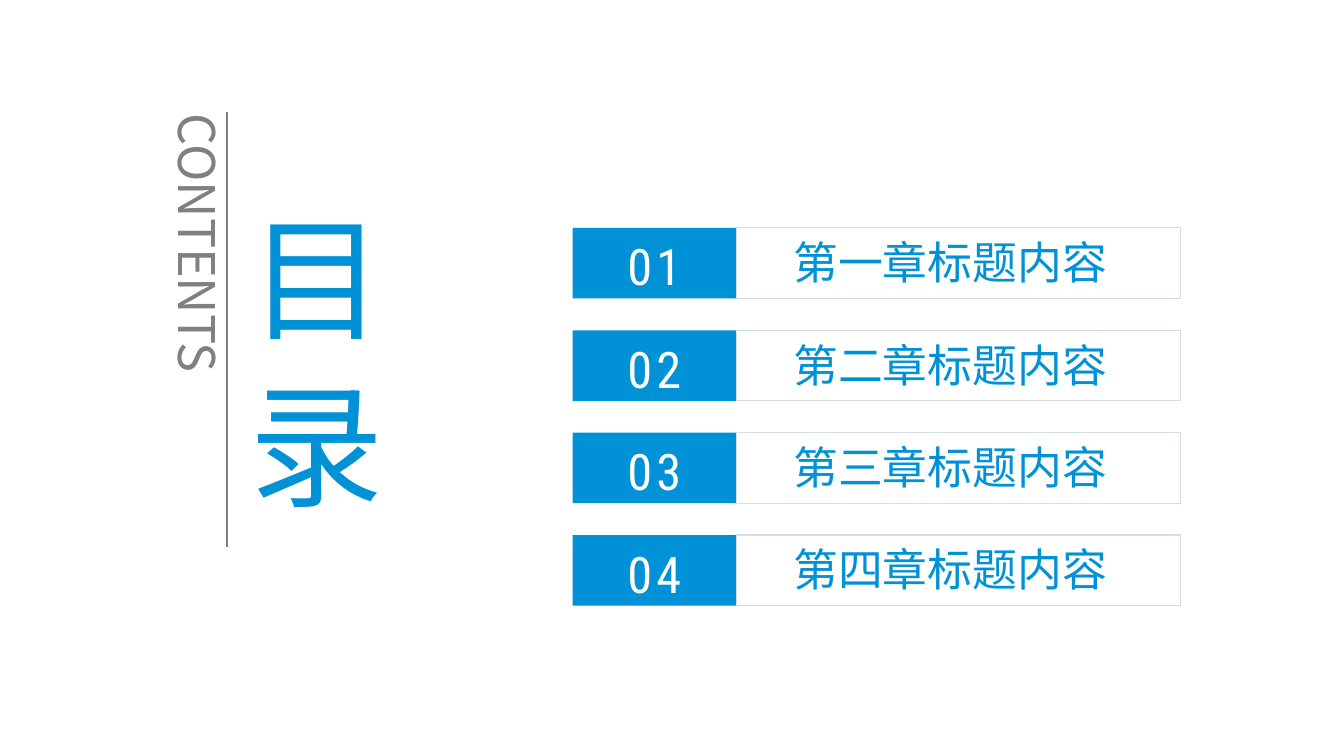
from dataclasses import dataclass

from pptx import Presentation
from pptx.dml.color import RGBColor
from pptx.enum.shapes import MSO_CONNECTOR, MSO_SHAPE
from pptx.enum.text import MSO_ANCHOR, MSO_AUTO_SIZE, PP_ALIGN
from pptx.oxml.ns import qn
from pptx.util import Inches, Pt


@dataclass(frozen=True)
class Theme:
    blue: RGBColor = RGBColor(0x00, 0x91, 0xD6)
    gray: RGBColor = RGBColor(0x80, 0x80, 0x80)
    border: RGBColor = RGBColor(0xD6, 0xDC, 0xE5)
    white: RGBColor = RGBColor(0xFF, 0xFF, 0xFF)
    cjk_font: str = "Noto Sans CJK SC"
    number_font: str = "Roboto Condensed"
    title_size: int = 96
    label_size: int = 36
    number_size: int = 36
    chapter_size: int = 32


THEME = Theme()
CHAPTERS = ["第一章标题内容", "第二章标题内容", "第三章标题内容", "第四章标题内容"]


def set_text(tf, text, font, size, color):
    """Fill a text frame with one run and return that run."""
    tf.text = text
    r = tf.paragraphs[0].runs[0]
    r.font.name = font
    r.font.size = Pt(size)
    r.font.color.rgb = color
    ea = r.font._element.makeelement(qn("a:ea"), {"typeface": font})
    r.font._element.find(qn("a:latin")).addnext(ea)
    return r


def add_text(slide, box, text, size, color, vertical=False):
    sp = slide.shapes.add_textbox(*map(Inches, box))
    tf = sp.text_frame
    tf.word_wrap = False
    tf.auto_size = MSO_AUTO_SIZE.SHAPE_TO_FIT_TEXT
    if vertical:
        tf._txBody.bodyPr.set("vert", "eaVert")
    set_text(tf, text, THEME.cjk_font, size, color)


def add_rect(slide, box, fill=None, line=None):
    sp = slide.shapes.add_shape(MSO_SHAPE.RECTANGLE, *map(Inches, box))
    sp.shadow.inherit = False
    if fill is None:
        sp.fill.background()
    else:
        sp.fill.solid()
        sp.fill.fore_color.rgb = fill
    if line is None:
        sp.line.fill.background()
    else:
        sp.line.color.rgb = line
        sp.line.width = Pt(1)
    return sp


def add_heading(slide, left, top):
    """Vertical title and label on either side of a rule."""
    add_text(slide, (left + 0.61, top + 0.97, 1.82, 3.1), "目 录",
             THEME.title_size, THEME.blue, vertical=True)
    add_text(slide, (left, top, 0.81, 2.69), "CONTENTS",
             THEME.label_size, THEME.gray, vertical=True)

    # Dividing rule
    x = Inches(left + 0.74)
    rule = slide.shapes.add_connector(
        MSO_CONNECTOR.STRAIGHT, x, Inches(top + 0.08), x, Inches(top + 4.4))
    rule.line.color.rgb = THEME.gray
    rule.line.width = Pt(1.5)
    sp_pr = rule._element.spPr
    sp_pr.append(sp_pr.makeelement(qn("a:effectLst"), {}))


def add_chapter(slide, left, top, width, height, number, title):
    """Numbered blue tab followed by a bordered chapter title."""
    tab_w = 1.62
    add_text(slide, (left + 2.09, top + 0.02, 3.34, 0.64), title,
             THEME.chapter_size, THEME.blue)
    add_rect(slide, (left + tab_w, top, width - tab_w, height), line=THEME.border)

    # Number tab
    tab = add_rect(slide, (left, top, tab_w, height), fill=THEME.blue)
    tf = tab.text_frame
    tf.vertical_anchor = MSO_ANCHOR.MIDDLE
    tf.margin_bottom = 0
    r = set_text(tf, f"{number:02d}", THEME.number_font, THEME.number_size, THEME.white)
    r.font._element.set("spc", "300")
    tf.paragraphs[0].alignment = PP_ALIGN.CENTER


def add_chapter_list(slide, left, top, width, height):
    """Chapters spread evenly over the height of the box."""
    row_h = 0.7
    pitch = (height - row_h) / (len(CHAPTERS) - 1)
    for i, title in enumerate(CHAPTERS):
        add_chapter(slide, left, top + i * pitch, width, row_h, i + 1, title)


def main():
    prs = Presentation()
    prs.slide_width, prs.slide_height = Inches(13.33), Inches(7.5)
    slide = prs.slides.add_slide(prs.slide_layouts[6])
    add_heading(slide, 1.51, 1.03)
    add_chapter_list(slide, 5.68, 2.26, 6.03, 3.75)
    prs.save("out.pptx")


if __name__ == "__main__":
    main()
